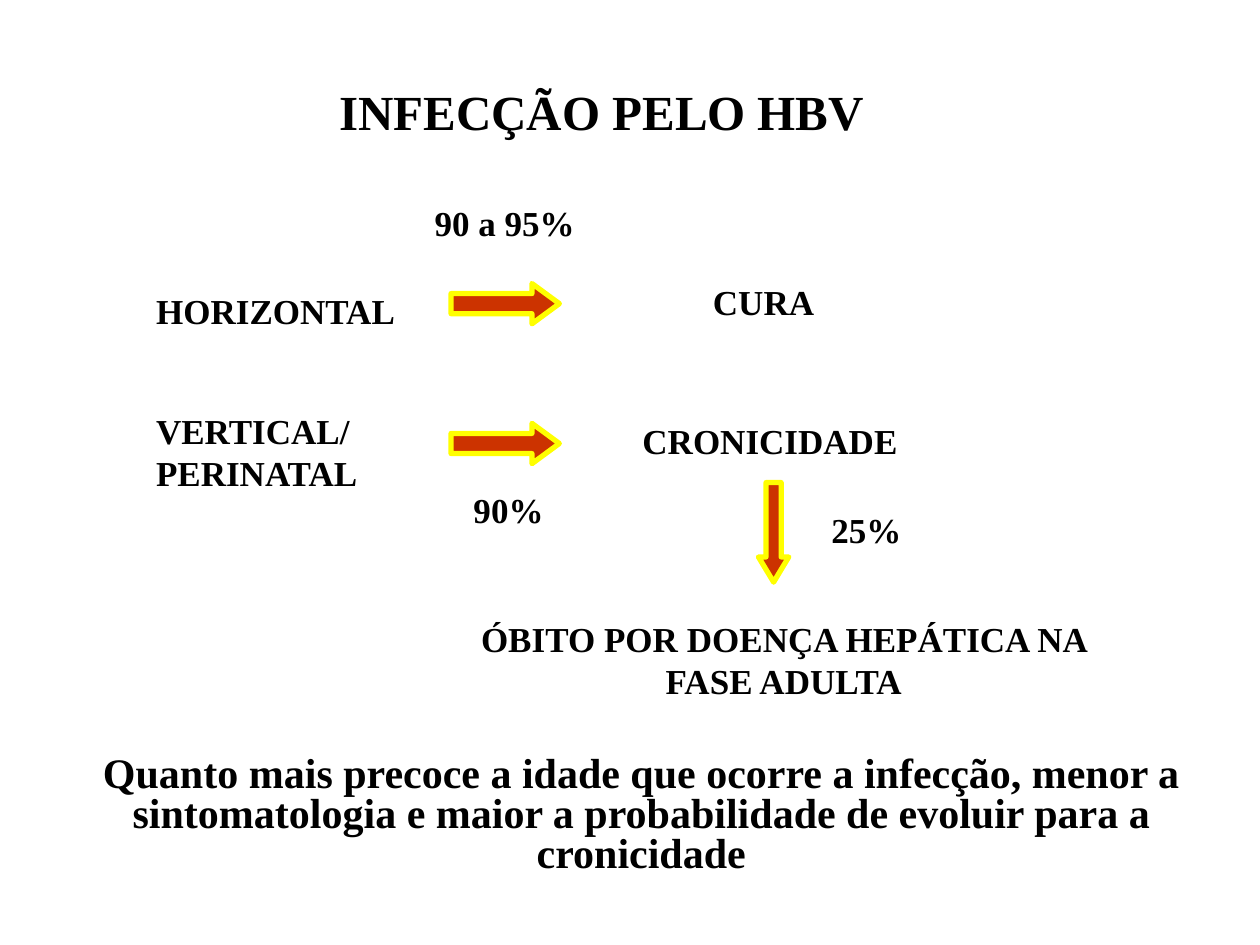
"""Builds a slide on the outcomes of HBV infection by route of transmission."""
import pptx
import pptx.dml.color
import pptx.enum.shapes
import pptx.enum.text
import pptx.util

BLACK = pptx.dml.color.RGBColor(0x00, 0x00, 0x00)
RED = pptx.dml.color.RGBColor(0xCC, 0x33, 0x00)
YELLOW = pptx.dml.color.RGBColor(0xFF, 0xFF, 0x00)
FONT = "Times New Roman"
LEFT = pptx.enum.text.PP_ALIGN.LEFT
CENTER = pptx.enum.text.PP_ALIGN.CENTER
RIGHT_ARROW = pptx.enum.shapes.MSO_SHAPE.RIGHT_ARROW
DOWN_ARROW = pptx.enum.shapes.MSO_SHAPE.DOWN_ARROW

SLIDE_WIDTH, SLIDE_HEIGHT = 10, 7.5
GRID_COLUMNS, GRID_ROWS = 100, 75
ROUTE_COLUMN, ARROW_COLUMN, RATE_COLUMN = 11.4, 35.8, 36.6
HORIZONTAL_ROW, VERTICAL_ROW = 22.5, 33.6
ONE_LINE, TWO_LINES = 4.3, 7.7

TITLE = ("INFECÇÃO PELO HBV", (24, 6, 47.5, 5.7))
CONCLUSION = (
    "Quanto mais precoce a idade que ocorre a infecção, menor a "
    "sintomatologia e maior a probabilidade de evoluir para a cronicidade",
    (5.9, 59.5, 90, 10.6),
)
LABELS = [
    ("HORIZONTAL", (ROUTE_COLUMN, HORIZONTAL_ROW, 22.8, ONE_LINE), LEFT),
    ("VERTICAL/ PERINATAL", (ROUTE_COLUMN, 32, 22, TWO_LINES), LEFT),
    ("90 a 95%", (33.5, 15.5, 14.2, ONE_LINE), LEFT),
    ("90%", (RATE_COLUMN, 38.3, 8.7, ONE_LINE), LEFT),
    ("25%", (65, 39.9, 7.9, ONE_LINE), LEFT),
    ("CURA", (53.9, 21.8, 13.4, ONE_LINE), CENTER),
    ("CRONICIDADE", (50, 32.8, 36.2, ONE_LINE), LEFT),
    ("ÓBITO POR DOENÇA HEPÁTICA NA FASE ADULTA",
     (RATE_COLUMN, 48.5, 51.2, TWO_LINES), CENTER),
]
ARROWS = [
    (RIGHT_ARROW, (ARROW_COLUMN, HORIZONTAL_ROW, 8.6, 3.2), 0.68),
    (RIGHT_ARROW, (ARROW_COLUMN, VERTICAL_ROW, 8.6, 3.2), 0.68),
    (DOWN_ARROW, (60.2, 38.3, 2.4, 7.9), 0.83),
]


def place(cells):
    column, row, width, height = cells
    column_step = SLIDE_WIDTH / GRID_COLUMNS
    row_step = SLIDE_HEIGHT / GRID_ROWS
    return [pptx.util.Inches(length) for length in (
        column * column_step, row * row_step, width * column_step, height * row_step)]


def add_text(slide, text, cells, size=20, align=CENTER, line_spacing=1.0):
    frame = slide.shapes.add_textbox(*place(cells)).text_frame
    frame.word_wrap = True
    frame.auto_size = pptx.enum.text.MSO_AUTO_SIZE.SHAPE_TO_FIT_TEXT
    paragraph = frame.paragraphs[0]
    paragraph.alignment = align
    paragraph.line_spacing = line_spacing
    run = paragraph.add_run()
    run.text = text
    run.font.name = FONT
    run.font.size = pptx.util.Pt(size)
    run.font.bold = True
    run.font.color.rgb = BLACK


def add_arrow(slide, preset, cells, head_length):
    arrow = slide.shapes.add_shape(preset, *place(cells))
    arrow.adjustments[0] = 0.5
    arrow.adjustments[1] = head_length
    arrow.shadow.inherit = False
    arrow.fill.solid()
    arrow.fill.fore_color.rgb = RED
    arrow.line.color.rgb = YELLOW
    arrow.line.width = pptx.util.Pt(3)


def main():
    deck = pptx.Presentation()
    deck.slide_width = pptx.util.Inches(SLIDE_WIDTH)
    deck.slide_height = pptx.util.Inches(SLIDE_HEIGHT)
    slide = deck.slides.add_slide(deck.slide_layouts[6])
    add_text(slide, *TITLE, size=28)
    add_text(slide, *CONCLUSION, size=24, line_spacing=0.8)
    for text, cells, align in LABELS:
        add_text(slide, text, cells, align=align)
    for preset, cells, head_length in ARROWS:
        add_arrow(slide, preset, cells, head_length)
    deck.save("out.pptx")


if __name__ == "__main__":
    main()
